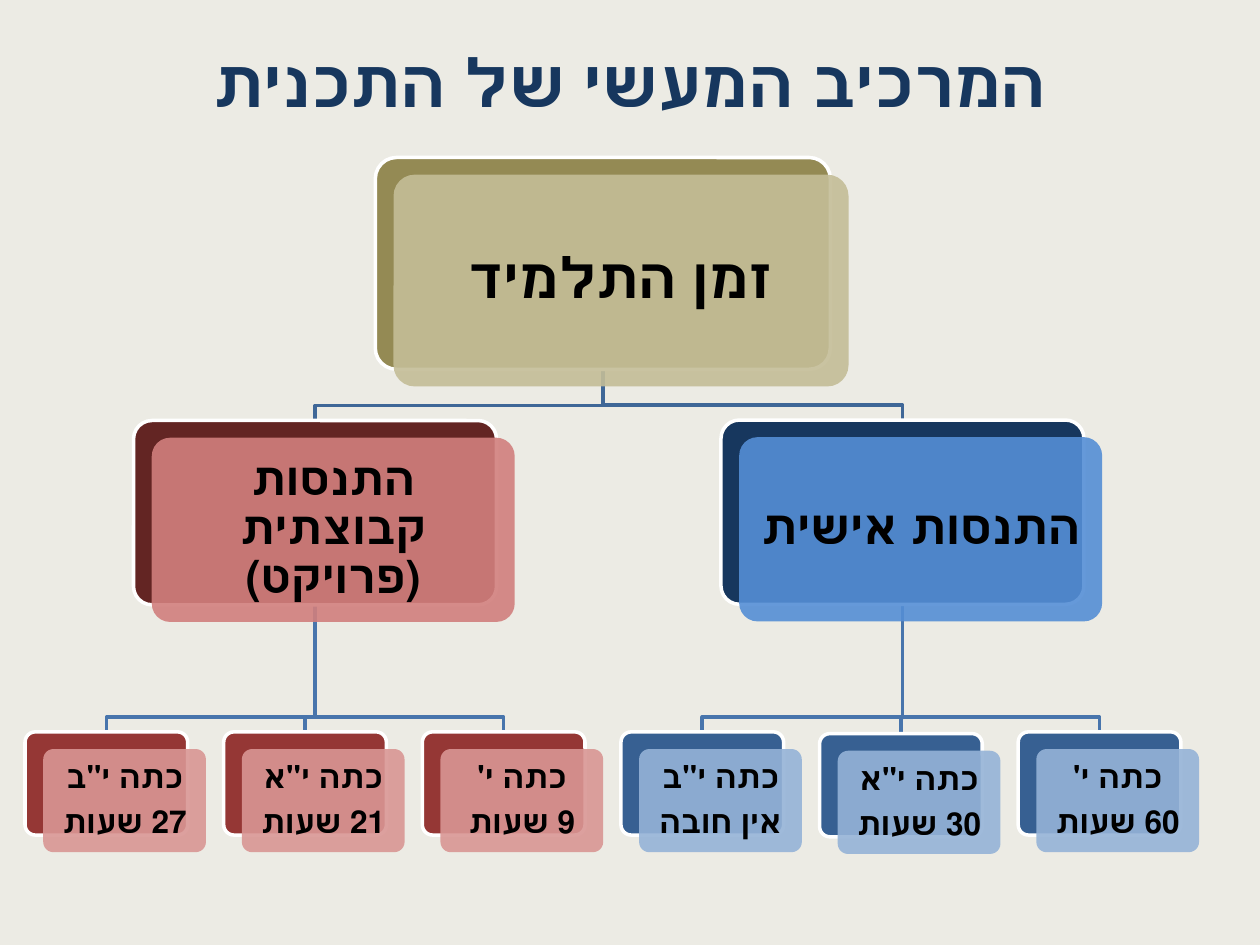
"""Build a slide with a three-level chart of student time in the programme."""
from lxml import etree
from pptx import Presentation
from pptx.dml.color import RGBColor
from pptx.enum.shapes import MSO_SHAPE
from pptx.enum.text import MSO_ANCHOR, PP_ALIGN
from pptx.oxml.ns import qn
from pptx.util import Pt

ROUNDED = MSO_SHAPE.ROUNDED_RECTANGLE
MIDDLE = MSO_ANCHOR.MIDDLE
CENTER = PP_ALIGN.CENTER
OFFSET_X, OFFSET_Y = 10.4, 9.8
ELBOW_GAP = 8.5


def color(hex_value):
    return RGBColor.from_string(hex_value)


def write(shape, lines, size, hex_value):
    frame = shape.text_frame
    frame.word_wrap = True
    frame.vertical_anchor = MIDDLE
    frame.text = "\n".join(lines)
    for paragraph in frame.paragraphs:
        paragraph.alignment = CENTER
        paragraph._p.get_or_add_pPr().set("rtl", "1")
        paragraph.font.name = "Calibri"
        paragraph.font.size = Pt(size)
        paragraph.font.bold = True
        paragraph.font.color.rgb = color(hex_value)
    return frame


presentation = Presentation()
presentation.slide_width = Pt(720)
presentation.slide_height = Pt(540)
slide = presentation.slides.add_slide(presentation.slide_layouts[6])
slide.background.fill.solid()
slide.background.fill.fore_color.rgb = color("ECEBE4")

title = slide.shapes.add_textbox(Pt(36), Pt(-19.4), Pt(648), Pt(131))
write(title, ["המרכיב המעשי של התכנית"], 38, "17375E")

root = (214.5, 90, 260, 121, "948A54", "C4BD97", 32, ["זמן התלמיד"])
group = (76.3, 240.3, 207.4, 105.3, "632523", "D17F7D", 26, ["התנסות קבוצתית (פרויקט)"])
personal = (412, 240, 207.4, 105.3, "17375E", "558ED5", 27, ["התנסות אישית"])

leaf_texts = [
    (group, 'כתה י"ב', "27 שעות", 418.2),
    (group, 'כתה י"א', "21 שעות", 418.2),
    (group, "כתה י'", "9 שעות", 418.2),
    (personal, 'כתה י"ב', "אין חובה", 418.2),
    (personal, 'כתה י"א', "30 שעות", 419.2),
    (personal, "כתה י'", "60 שעות", 418.2),
]
leaf_colors = {26: ("953735", "D99694"), 27: ("376092", "95B3D7")}

nodes = [root, group, personal]
links = [(root, group, "3F6797"), (root, personal, "3F6797")]
for index, (parent, grade, hours, top) in enumerate(leaf_texts):
    back, front = leaf_colors[parent[6]]
    leaf = (14.3 + index * 113.5, top, 93, 59, back, front, 18, [grade, hours])
    nodes.append(leaf)
    links.append((parent, leaf, "4875AC"))

for parent, child, line_color in links:
    start_x = parent[0] + parent[2] / 2
    start_y = parent[1] + parent[3]
    end_x = child[0] + child[2] / 2
    end_y = child[1]
    bend_y = end_y - ELBOW_GAP
    builder = slide.shapes.build_freeform(Pt(start_x), Pt(start_y))
    corners = [(start_x, bend_y), (end_x, bend_y), (end_x, end_y)]
    builder.add_line_segments([(Pt(x), Pt(y)) for x, y in corners], close=False)
    elbow = builder.convert_to_shape()
    elbow.shadow.inherit = False
    elbow.fill.background()
    elbow.line.color.rgb = color(line_color)
    elbow.line.width = Pt(2)

for left, top, width, height, back_color, front_color, size, lines in nodes:
    back = slide.shapes.add_shape(ROUNDED, Pt(left), Pt(top), Pt(width), Pt(height))
    back.line.color.rgb = color("FFFFFF")
    back.line.width = Pt(2)
    front = slide.shapes.add_shape(
        ROUNDED, Pt(left + OFFSET_X), Pt(top + OFFSET_Y), Pt(width), Pt(height))
    front.line.fill.background()
    for card, fill_color in ((back, back_color), (front, front_color)):
        card.adjustments[0] = 0.1
        card.shadow.inherit = False
        card.fill.solid()
        card.fill.fore_color.rgb = color(fill_color)
    srgb = front._element.spPr.find(qn("a:solidFill")).find(qn("a:srgbClr"))
    etree.SubElement(srgb, qn("a:alpha")).set("val", "90000")

    frame = write(front, lines, size, "000000")
    frame.margin_left = frame.margin_right = Pt(size * 0.3)
    frame.margin_top = frame.margin_bottom = Pt(size * 0.3)
    for paragraph in frame.paragraphs:
        paragraph.line_spacing = 0.9
        paragraph.space_after = Pt(size * 0.35)

presentation.save("out.pptx")
